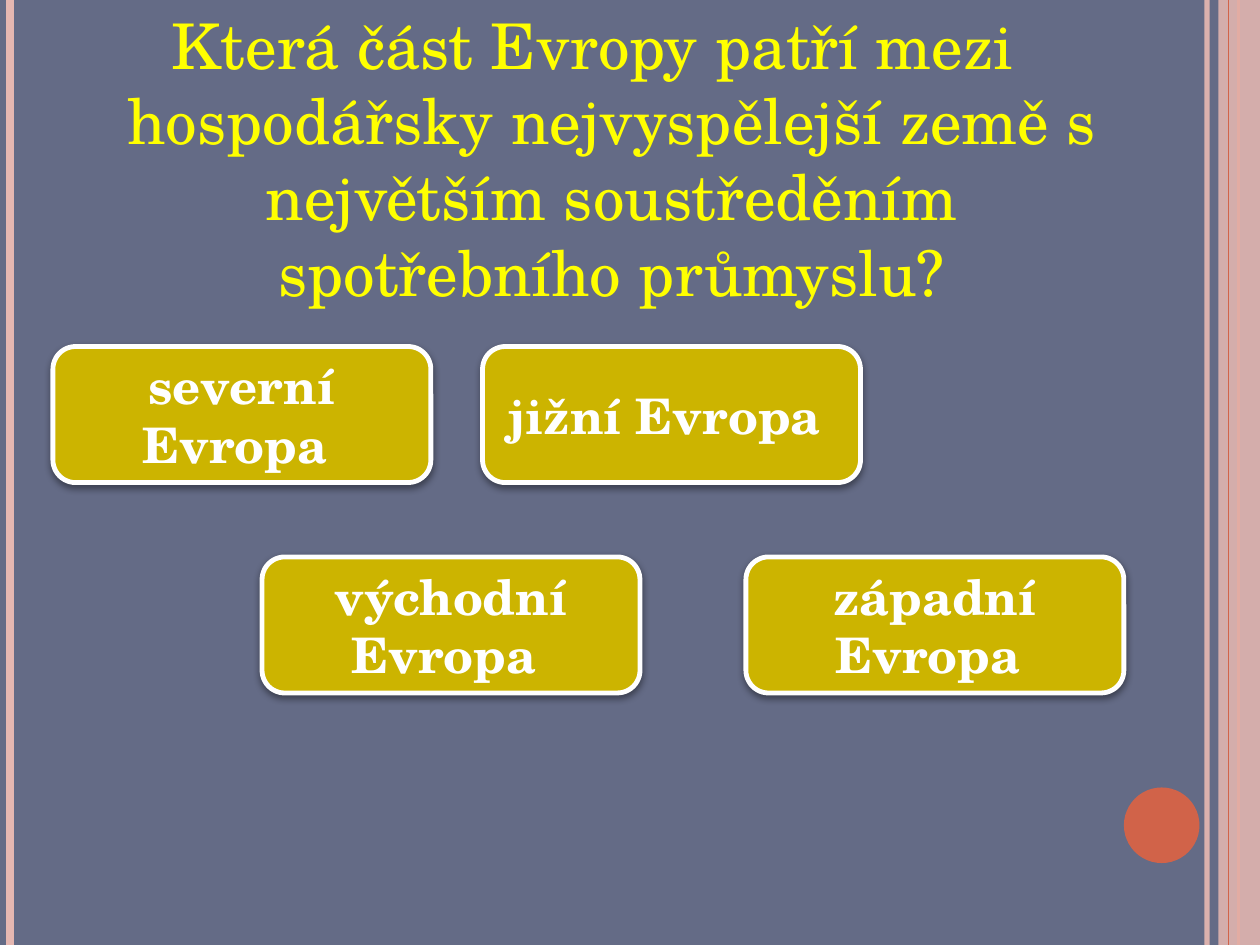
from lxml import etree
from pptx import Presentation
from pptx.dml.color import RGBColor
from pptx.enum.shapes import MSO_CONNECTOR, MSO_SHAPE
from pptx.enum.text import MSO_ANCHOR, MSO_AUTO_SIZE, PP_ALIGN
from pptx.oxml.ns import qn
from pptx.util import Inches, Pt

STRAIGHT = MSO_CONNECTOR.STRAIGHT
RECTANGLE = MSO_SHAPE.RECTANGLE
ELLIPSE = MSO_SHAPE.OVAL
ROUNDED = MSO_SHAPE.ROUNDED_RECTANGLE
CENTER = PP_ALIGN.CENTER
TOP, MIDDLE = MSO_ANCHOR.TOP, MSO_ANCHOR.MIDDLE

COLORS = {
    "background": "646B86",
    "pink": "E5B7B1",
    "orange": "D16349",
    "question": "FFFF00",
    "answer": "CCB400",
    "white": "FFFFFF",
    "shadow": "000000",
}
FONT = "TeX Gyre Schola"
QUESTION_FONT = {"name": FONT, "size": Pt(36)}
ANSWER_FONT = {"name": FONT, "size": Pt(28), "bold": True}
PAGE_WIDTH, PAGE_HEIGHT = 10, 7.5


def rgb(name):
    return RGBColor.from_string(COLORS[name])


def set_alpha(parent, percent):
    """Make the first colour found inside parent partly transparent."""
    color = next(parent.iter(qn("a:srgbClr")))
    etree.SubElement(color, qn("a:alpha"), val=str(percent * 1000))


def format_font(font, values, color):
    for name, value in values.items():
        setattr(font, name, value)
    font.color.rgb = rgb(color)


def add_plain_shape(page, kind, box, color):
    shape = page.shapes.add_shape(kind, *(Inches(value) for value in box))
    shape.shadow.inherit = False
    shape.fill.solid()
    shape.fill.fore_color.rgb = rgb(color)
    shape.line.fill.background()
    return shape


def add_stripe(page, x, color, width, alpha=None):
    stripe = page.shapes.add_connector(
        STRAIGHT, Inches(x), 0, Inches(x), Inches(PAGE_HEIGHT))
    stripe.line.color.rgb = rgb(color)
    stripe.line.width = Pt(width)
    properties = stripe.element.spPr
    if alpha:
        set_alpha(properties, alpha)
    etree.SubElement(properties, qn("a:effectLst"))


def add_frame(page):
    """Stripes on both edges, the right band and the round badge."""
    add_stripe(page, 9.58, "pink", 3, 93)
    add_stripe(page, 0.08, "pink", 4.5)
    add_stripe(page, 9.83, "orange", 1.5)
    band_left = 9.67
    band = add_plain_shape(
        page, RECTANGLE,
        (band_left, 0, PAGE_WIDTH - band_left, PAGE_HEIGHT), "pink")
    set_alpha(band.element.spPr, 87)
    add_stripe(page, 9.75, "orange", 0.75)
    add_plain_shape(page, ELLIPSE, (8.92, 6.25, 0.6, 0.6), "orange")


def add_question(page, box, text):
    body = page.placeholders[1]
    # Bring the placeholder in front of the frame
    page.shapes.element.append(body.element)
    body.left, body.top, body.width, body.height = map(Inches, box)
    frame = body.text_frame
    frame.auto_size = MSO_AUTO_SIZE.NONE
    frame.vertical_anchor = TOP
    para = frame.paragraphs[0]
    para.alignment = CENTER
    para.space_before = Pt(6)
    span = para.add_run()
    span.text = text
    format_font(span.font, QUESTION_FONT, "question")
    # Hanging indent without a bullet
    properties = para._p.get_or_add_pPr()
    properties.set("marL", str(Inches(0.3)))
    properties.set("indent", str(-Inches(0.3)))
    etree.SubElement(properties, qn("a:buNone"))


def add_shadow(shape):
    effects = shape.element.spPr.find(qn("a:effectLst"))
    shadow = etree.SubElement(
        effects, qn("a:outerShdw"), blurRad=str(Pt(4)), dist=str(Pt(2)),
        dir=str(90 * 60000), rotWithShape="0")
    etree.SubElement(shadow, qn("a:srgbClr"), val=COLORS["shadow"])
    set_alpha(shadow, 40)


def add_answer(page, box, lines):
    button = add_plain_shape(page, ROUNDED, box, "answer")
    button.line.color.rgb = rgb("white")
    button.line.width = Pt(2.75)
    add_shadow(button)
    frame = button.text_frame
    frame.word_wrap = True
    frame.vertical_anchor = MIDDLE
    for index, line in enumerate(lines):
        para = frame.add_paragraph() if index else frame.paragraphs[0]
        para.alignment = CENTER
        span = para.add_run()
        span.text = line
        format_font(span.font, ANSWER_FONT, "white")


def add_answers(page):
    width, height = 3, 1.08
    upper, lower = 2.75, 4.42
    answers = [
        (0.42, upper, ["severní Evropa "]),
        (3.83, upper, ["jižní Evropa "]),
        (2.08, lower, ["východní", "Evropa "]),
        (5.92, lower, ["západní Evropa "]),
    ]
    for left, top, lines in answers:
        add_answer(page, (left, top, width, height), lines)


def main():
    deck = Presentation()
    deck.slide_width = Inches(PAGE_WIDTH)
    deck.slide_height = Inches(PAGE_HEIGHT)
    page = deck.slides.add_slide(deck.slide_layouts[1])
    page.background.fill.solid()
    page.background.fill.fore_color.rgb = rgb("background")
    # The page has no title
    title = page.shapes.title.element
    title.getparent().remove(title)

    add_frame(page)
    add_question(
        page, (0.33, 0, 8.75, 5.33),
        "Která část Evropy patří mezi hospodářsky nejvyspělejší země "
        "s největším soustředěním spotřebního průmyslu?")
    add_answers(page)
    deck.save("out.pptx")


if __name__ == "__main__":
    main()
